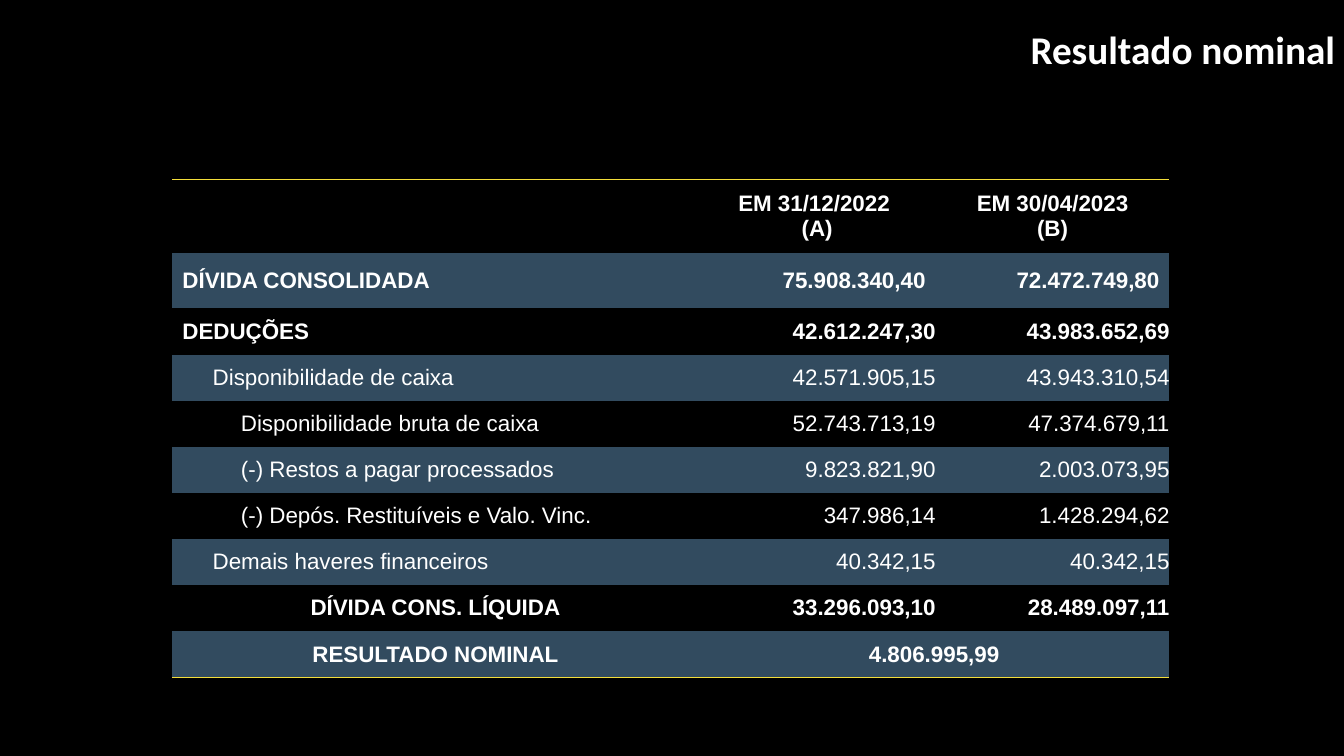
from pptx import Presentation
from pptx.dml.color import RGBColor
from pptx.enum.text import MSO_ANCHOR, MSO_AUTO_SIZE, PP_ALIGN
from pptx.oxml import parse_xml
from pptx.oxml.ns import nsdecls
from pptx.util import Inches, Pt

WHITE, BLACK, BAND, YELLOW = "FFFFFF", "000000", "324B5F", "F4DE3A"
NO_STYLE = "{2D5ABB26-0587-4C30-8999-92F81FD0307C}"
LEFT, CENTER, RIGHT = PP_ALIGN.LEFT, PP_ALIGN.CENTER, PP_ALIGN.RIGHT

HEADER = ["", "EM 31/12/2022 \n(A)", "EM 30/04/2023\n(B)"]
# label, label alignment, label indent, bold, values
ROWS = [
    ("DÍVIDA CONSOLIDADA", LEFT, 0, True, ["75.908.340,40", "72.472.749,80"]),
    ("DEDUÇÕES", LEFT, 0.1, True, ["42.612.247,30", "43.983.652,69"]),
    ("Disponibilidade de caixa", LEFT, 0.4, False, ["42.571.905,15", "43.943.310,54"]),
    ("Disponibilidade bruta de caixa", LEFT, 0.68, False, ["52.743.713,19", "47.374.679,11"]),
    ("(-) Restos a pagar processados", LEFT, 0.68, False, ["9.823.821,90", "2.003.073,95"]),
    ("(-) Depós. Restituíveis e Valo. Vinc.", LEFT, 0.68, False, ["347.986,14", "1.428.294,62"]),
    ("Demais haveres financeiros", LEFT, 0.4, False, ["40.342,15", "40.342,15"]),
    ("DÍVIDA CONS. LÍQUIDA", CENTER, 0, True, ["33.296.093,10", "28.489.097,11"]),
    ("RESULTADO NOMINAL", CENTER, 0, True, ["4.806.995,99"]),
]


def rgb(color):
    return RGBColor.from_string(color)


def write(tf, text, size=16, font="Arial", color=WHITE, bold=True, align=LEFT, indent=0):
    for i, line in enumerate(text.split("\n")):
        p = tf.paragraphs[0] if i == 0 else tf.add_paragraph()
        p.alignment = align
        if indent:
            pPr = p._p.get_or_add_pPr()
            pPr.set("marL", str(Inches(indent)))
            pPr.set("indent", "0")
        r = p.add_run()
        r.text = line
        r.font.size, r.font.name, r.font.bold = Pt(size), font, bold
        r.font.color.rgb = rgb(color)


def add_border(cell, side, color=YELLOW, width=1):
    """Draw one cell edge; side is lnT, lnB, lnL or lnR."""
    cell._tc.get_or_add_tcPr().insert(0, parse_xml(
        f'<a:{side} {nsdecls("a")} w="{Pt(width)}"><a:solidFill>'
        f'<a:srgbClr val="{color}"/></a:solidFill></a:{side}>'))


def format_cell(cell, banded, inset):
    cell.vertical_anchor = MSO_ANCHOR.MIDDLE
    x, y = (0.1, 0.05) if inset else (0, 0)
    cell.margin_left = cell.margin_right = Inches(x)
    cell.margin_top = cell.margin_bottom = Inches(y)
    if banded:
        cell.fill.solid()
        cell.fill.fore_color.rgb = rgb(BAND)
    else:
        cell.fill.background()


def add_title(slide, x, y, w, h):
    sp = slide.shapes.title
    sp.left, sp.top, sp.width, sp.height = map(Inches, (x, y, w, h))
    tf = sp.text_frame
    tf.word_wrap = True
    tf.auto_size = MSO_AUTO_SIZE.SHAPE_TO_FIT_TEXT
    tf.vertical_anchor = MSO_ANCHOR.TOP
    write(tf, "Resultado nominal", size=28, font="Calibri", align=RIGHT)


def add_debt_table(slide, x, y, w, h):
    frame = slide.shapes.add_table(len(ROWS) + 1, 3, *map(Inches, (x, y, w, h)))
    table = frame.table
    table.first_row = table.horz_banding = False
    table._tbl.tblPr.find("{*}tableStyleId").text = NO_STYLE

    value_widths = [2.35, 2.32]
    for col, width in zip(table.columns, [w - sum(value_widths)] + value_widths):
        col.width = Inches(width)
    tall = [0.73, 0.55]
    regular = (h - sum(tall)) / (len(ROWS) - 1)
    for row, height in zip(table.rows, tall + [regular] * (len(ROWS) - 1)):
        row.height = Inches(height)

    for i, row in enumerate(table.rows):
        for cell in row.cells:
            format_cell(cell, banded=i % 2 == 1, inset=i < 2)
    for j, text in enumerate(HEADER):
        cell = table.cell(0, j)
        add_border(cell, "lnT")
        add_border(table.cell(len(ROWS), j), "lnB")
        if text:
            write(cell.text_frame, text, align=CENTER)

    for i, (label, align, indent, bold, values) in enumerate(ROWS, 1):
        write(table.cell(i, 0).text_frame, label, bold=bold, align=align, indent=indent)
        single = len(values) == 1
        if single:
            table.cell(i, 1).merge(table.cell(i, 2))
        for j, value in enumerate(values, 1):
            write(table.cell(i, j).text_frame, value, bold=bold,
                  align=CENTER if single else RIGHT)


def main():
    prs = Presentation()
    prs.slide_width, prs.slide_height = Inches(13.33), Inches(7.5)
    slide = prs.slides.add_slide(prs.slide_layouts[5])
    slide.background.fill.solid()
    slide.background.fill.fore_color.rgb = rgb(BLACK)
    add_title(slide, 4.91, 0.2, 8.43, 0.57)
    add_debt_table(slide, 1.71, 1.78, 9.89, 4.94)
    prs.save("out.pptx")


if __name__ == "__main__":
    main()
